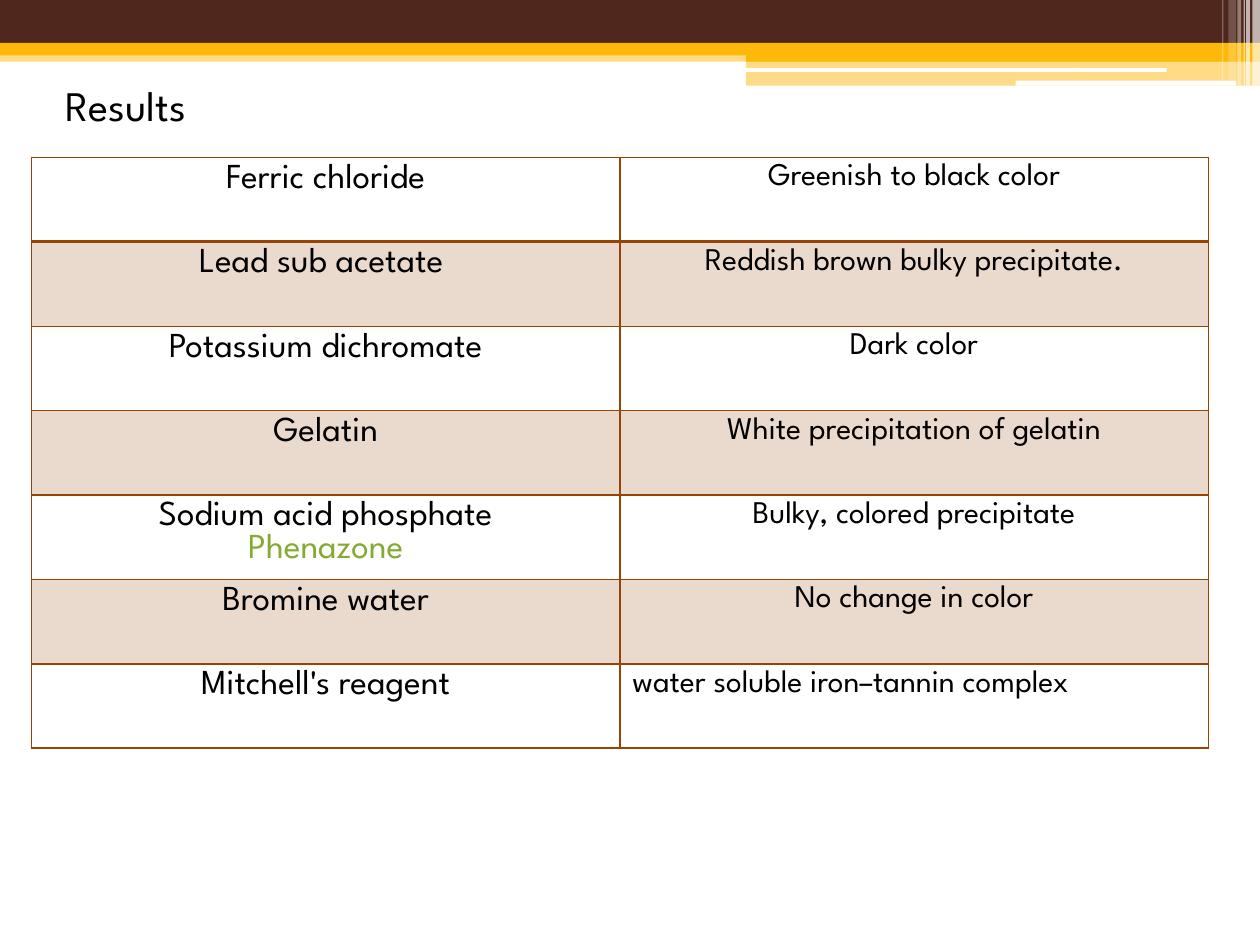
from pptx import Presentation
from pptx.dml.color import RGBColor as RGB
from pptx.enum.shapes import MSO_SHAPE as Shape
from pptx.enum.text import MSO_ANCHOR as Anchor, PP_ALIGN as Align
from pptx.oxml.ns import qn
from pptx.util import Inches, Pt
from lxml.etree import SubElement as Sub

THEME = {
    "font": "League Spartan", "head": 24, "test": 20, "note": 18,
    "ink": "000000", "green": "84AA33", "rust": "964305",
    "gold": "FEB80A", "brown": "4F271C", "white": "FFFFFF",
}
TITLE = "Results"
ROWS = [
    ("Ferric chloride", "Greenish to black color"),
    ("Lead sub acetate ", "Reddish brown bulky precipitate."),
    ("Potassium dichromate", "Dark color"),
    ("Gelatin", "White precipitation of gelatin"),
    ("Sodium acid phosphate\nPhenazone", "Bulky, colored precipitate"),
    ("Bromine water", "No change in color"),
    ("Mitchell's reagent", "water soluble iron–tannin complex"),
]
BANDS = [
    (0, 0.4, 10, 0.09, "gold", 50),
    (0, 0, 10, 0.34, "brown", 100),
    (0, 0.34, 10, 0.1, "gold", 100),
    (5.92, 0.39, 4.08, 0.1, "gold", 100),
    (5.92, 0.48, 4.08, 0.2, "gold", 50),
]
SLOTS = [(5.91, 0.54, 3.35, 0.03), (8.06, 0.64, 1.75, 0.04)]
STRIPES = [
    (9.94, 0.06, 0.68, 65), (9.89, 0.03, 0.68, 65), (9.87, 0.01, 0.68, 60),
    (9.82, 0.03, 0.68, 40), (9.75, 0.06, 0.64, 20), (9.7, 0.01, 0.64, 30),
]
LEFT, TOP, WIDE, HIGH = 0.25, 1.25, 4.67, 0.67


def paint(fill, tone, alpha=100):
    fill.solid()
    fill.fore_color.rgb = RGB.from_string(THEME[tone])
    if alpha < 100:
        clr = fill._xPr.find(qn("a:solidFill"))[0]
        Sub(clr, qn("a:alpha"), val=str(alpha * 1000))


def bar(slide, x, y, w, h, tone, alpha=100, kind=Shape.RECTANGLE):
    shape = slide.shapes.add_shape(kind, *map(Inches, (x, y, w, h)))
    shape.shadow.inherit = False
    shape.line.fill.background()
    paint(shape.fill, tone, alpha)


def style(para, size, tone="ink", align=Align.CENTER):
    para.alignment = align
    for run in para.runs:
        run.font.name = THEME["font"]
        run.font.size = Pt(THEME[size])
        run.font.bold = False
        run.font.color.rgb = RGB.from_string(THEME[tone])


def edge(cell, base):
    props = cell._tc.get_or_add_tcPr()
    for spot, (side, wide) in enumerate(zip("LRTB", (1, 1, 1, base))):
        line = props.makeelement(qn(f"a:ln{side}"), {"w": str(Pt(wide))})
        props.insert(spot, line)
        fill = Sub(line, qn("a:solidFill"))
        Sub(fill, qn("a:srgbClr"), val=THEME["rust"])


def trim(slide):
    for band in BANDS:
        bar(slide, *band)
    for slot in SLOTS:
        bar(slide, *slot, "white", kind=Shape.ROUNDED_RECTANGLE)
    for x, w, h, alpha in STRIPES:
        bar(slide, x, 0, w, h, "white", alpha)


def grid(slide):
    count = len(ROWS)
    size = (LEFT, TOP, 2 * WIDE, count * HIGH)
    table = slide.shapes.add_table(count, 2, *map(Inches, size)).table
    for col in table.columns:
        col.width = Inches(WIDE)
    for r, row in enumerate(ROWS):
        table.rows[r].height = Inches(HIGH)
        for c, text in enumerate(row):
            cell = table.cell(r, c)
            cell.text_frame.text = text
            if r % 2:
                paint(cell.fill, "rust", 20)
            else:
                cell.fill.background()
            edge(cell, 1 if r else 2)
            last = r == count - 1 and c == 1
            for p, para in enumerate(cell.text_frame.paragraphs):
                style(para, ("test", "note")[c], "green" if p else "ink",
                      Align.LEFT if last else Align.CENTER)


def main():
    deck = Presentation()
    deck.slide_width, deck.slide_height = Inches(10), Inches(7.5)
    slide = deck.slides.add_slide(deck.slide_layouts[5])
    trim(slide)
    grid(slide)
    title = slide.shapes.title
    title.left, title.top, title.width, title.height = map(
        Inches, (0.42, 0.58, 1.5, 0.5))
    frame = title.text_frame
    frame.text = TITLE
    frame.vertical_anchor = Anchor.TOP
    style(frame.paragraphs[0], "head", align=Align.LEFT)
    deck.save("out.pptx")


if __name__ == "__main__":
    main()
